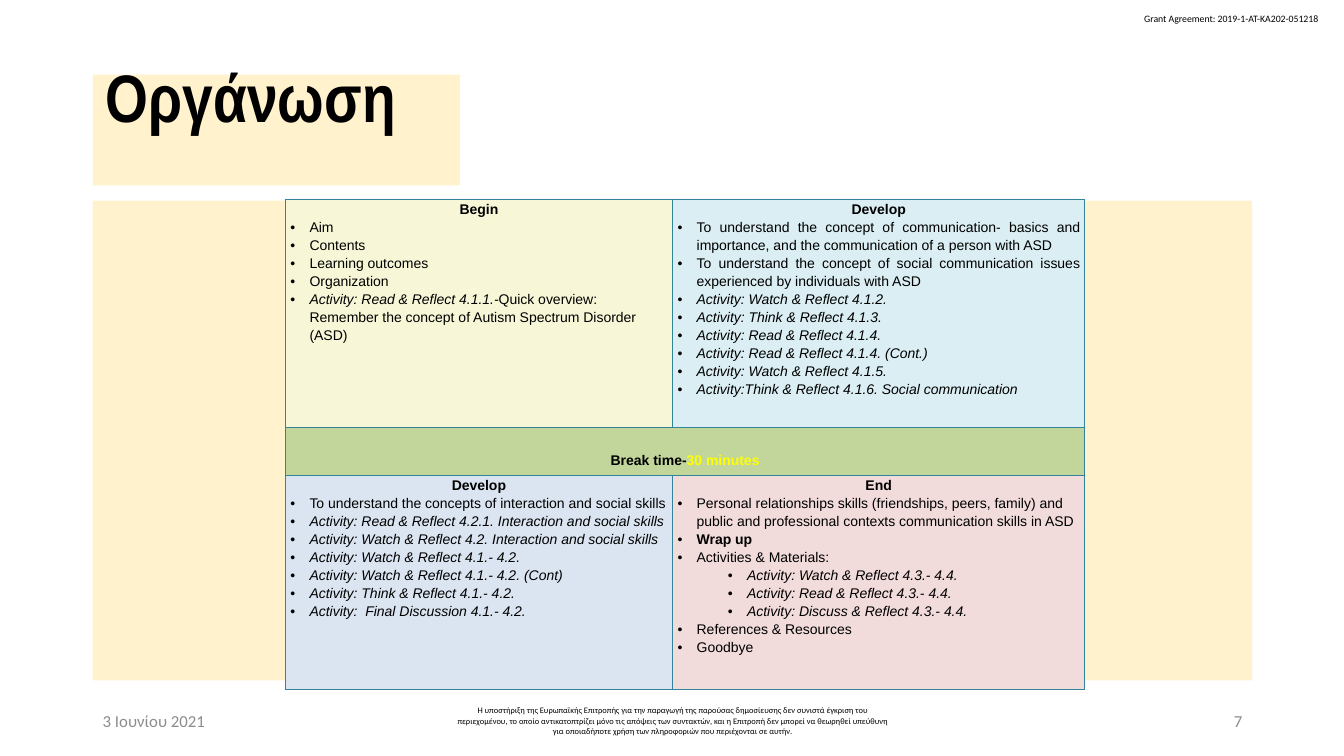
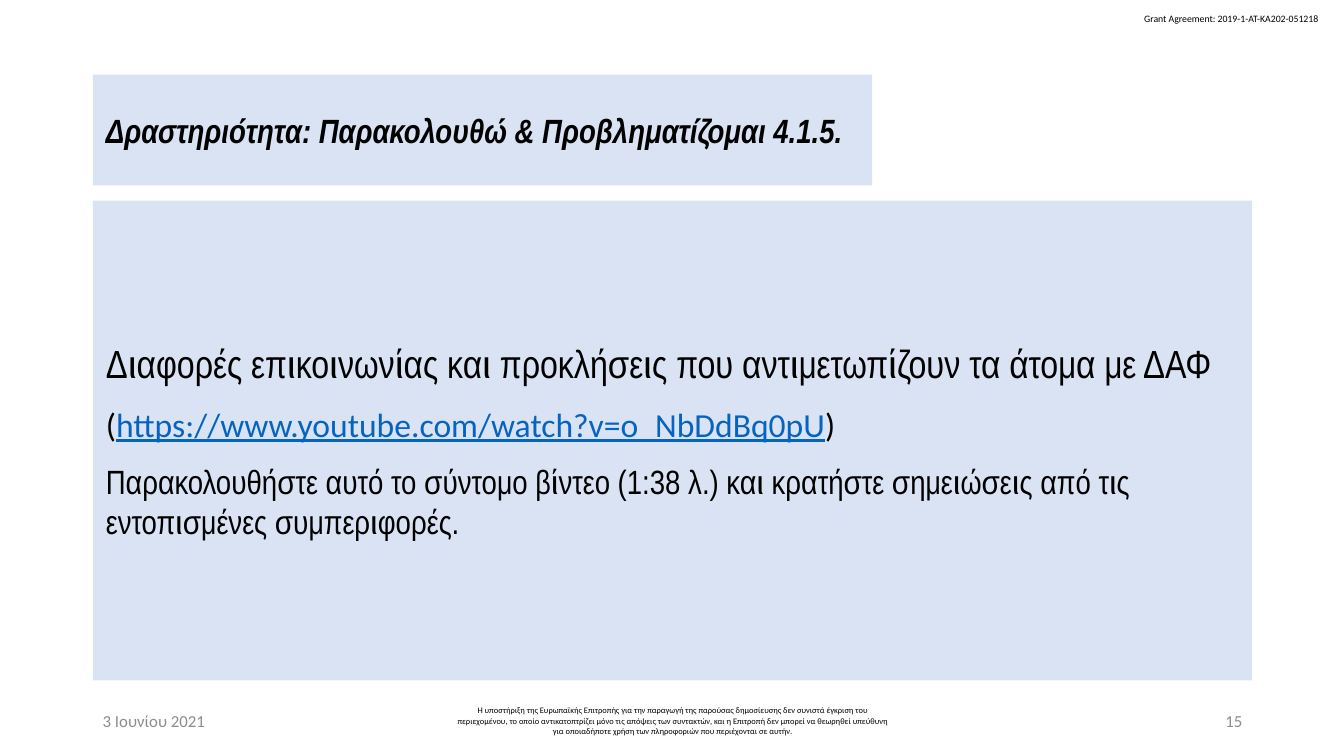
from dataclasses import dataclass

from lxml import etree
from pptx import Presentation
from pptx.dml.color import RGBColor
from pptx.enum.shapes import MSO_SHAPE
from pptx.enum.text import MSO_ANCHOR, MSO_AUTO_SIZE, PP_ALIGN
from pptx.oxml.ns import qn
from pptx.util import Inches, Pt

LEFT, CENTER, RIGHT, JUSTIFY = PP_ALIGN.LEFT, PP_ALIGN.CENTER, PP_ALIGN.RIGHT, PP_ALIGN.JUSTIFY
TOP, MIDDLE, BOTTOM = MSO_ANCHOR.TOP, MSO_ANCHOR.MIDDLE, MSO_ANCHOR.BOTTOM
RECTANGLE, NO_AUTOFIT = MSO_SHAPE.RECTANGLE, MSO_AUTO_SIZE.NONE


@dataclass(frozen=True)
class Theme:
    black: str = "000000"
    gray: str = "8C8C8C"
    cream: str = "FFF2CC"
    pale_blue: str = "DAE3F3"
    link: str = "0563C1"
    highlight: str = "FFFF00"
    border: str = "31849B"
    begin: str = "F7F7D7"
    develop: str = "DAEEF3"
    pause: str = "C2D69B"
    interaction: str = "DBE5F1"
    end: str = "F2DBDB"
    heading_font: str = "Arial Narrow"
    text_font: str = "Calibri"
    table_font: str = "Arial"
    title_size: int = 48
    lead_size: int = 28
    text_size: int = 24
    footer_size: int = 12
    table_size: int = 10
    grant_size: int = 7
    disclaimer_size: int = 6


THEME = Theme()
BAND_LEFT, BAND_WIDTH = Inches(0.92), Inches(11.5)
TITLE_TOP, TITLE_HEIGHT = Inches(0.74), Inches(1.1)
BODY_TOP, BODY_HEIGHT = Inches(1.99), Inches(4.76)
BAND_INSETS = {
    "margin_left": Inches(0.13),
    "margin_right": Inches(0.13),
    "margin_top": Inches(0.07),
    "margin_bottom": Inches(0.07),
    "word_wrap": True,
    "auto_size": NO_AUTOFIT,
    "vertical_anchor": MIDDLE,
}
BOLD, ITALIC = {"bold": True}, {"italic": True}


def add_runs(paragraph, runs, font, size, color=THEME.black):
    """Write (text, format) pairs; a format overrides the shared font values."""
    for text, changes in runs:
        run = paragraph.add_run()
        run.text = text
        values = {"name": font, "size": Pt(size), "bold": False, "italic": False} | changes
        run.font.color.rgb = RGBColor.from_string(values.pop("color", color))
        for attribute, value in values.items():
            setattr(run.font, attribute, value)


def paint(shape, color):
    shape.fill.solid()
    shape.fill.fore_color.rgb = RGBColor.from_string(color)


prs = Presentation()
prs.slide_width, prs.slide_height = Inches(13.33), Inches(7.5)
TITLE_AND_CONTENT, TITLE_ONLY = prs.slide_layouts[1], prs.slide_layouts[5]

DISCLAIMER = (
    "Η υποστήριξη της Ευρωπαϊκής Επιτροπής για την παραγωγή της παρούσας δημοσίευσης "
    "δεν συνιστά έγκριση του περιεχομένου, το οποίο αντικατοπτρίζει μόνο τις απόψεις "
    "των συντακτών, και η Επιτροπή δεν μπορεί να θεωρηθεί υπεύθυνη για οποιαδήποτε "
    "χρήση των πληροφοριών που περιέχονται σε αυτήν."
)

# Shared frame: title band, grant line and footer
pages = [
    (TITLE_ONLY, "Οργάνωση", 3.64, THEME.cream, THEME.title_size, BOLD, "7"),
    (TITLE_AND_CONTENT, "Δραστηριότητα: Παρακολουθώ & Προβληματίζομαι 4.1.5.", 7.73,
     THEME.pale_blue, THEME.text_size, BOLD | ITALIC, "15"),
]
slides = []
for layout, heading, width, color, size, style, number in pages:
    slide = prs.slides.add_slide(layout)
    slides.append(slide)

    title = slide.shapes.title
    title.left, title.top = BAND_LEFT, TITLE_TOP
    title.width, title.height = Inches(width), TITLE_HEIGHT
    paint(title, color)
    for attribute, value in BAND_INSETS.items():
        setattr(title.text_frame, attribute, value)
    title_line = title.text_frame.paragraphs[0]
    title_line.alignment = LEFT
    add_runs(title_line, [(heading, style)], THEME.heading_font, size)

    margin_notes = [
        ("Grant Agreement: 2019-1-AT-KA202-051218", 11.25, 0.08, 1.97, 0.22,
         LEFT, THEME.grant_size, THEME.black, TOP, False),
        ("3 Ιουνίου 2021", 0.92, 6.95, 3, 0.4,
         LEFT, THEME.footer_size, THEME.gray, MIDDLE, True),
        (DISCLAIMER, 4.42, 6.95, 4.5, 0.4,
         CENTER, THEME.disclaimer_size, THEME.black, MIDDLE, True),
        (number, 9.42, 6.95, 3, 0.4,
         RIGHT, THEME.footer_size, THEME.gray, MIDDLE, True),
    ]
    for text, left, top, width, height, alignment, size, color, anchor, wrap in margin_notes:
        note = slide.shapes.add_textbox(Inches(left), Inches(top), Inches(width), Inches(height))
        note.text_frame.word_wrap = wrap
        note.text_frame.vertical_anchor = anchor
        note_line = note.text_frame.paragraphs[0]
        note_line.alignment = alignment
        add_runs(note_line, [(text, {})], THEME.text_font, size, color)

organization, activity = slides

# Organization: the large title sits high in its band
organization_title = organization.shapes.title.text_frame
organization_title.vertical_anchor = TOP
organization_title.margin_top = 0
organization_title.paragraphs[0].line_spacing = 0.75

backdrop = organization.shapes.add_shape(RECTANGLE, BAND_LEFT, BODY_TOP, BAND_WIDTH, BODY_HEIGHT)
backdrop.shadow.inherit = False
backdrop.line.fill.background()
paint(backdrop, THEME.cream)

COLUMN_WIDTHS, ROW_HEIGHTS = [3.84, 4.09], [2.26, 0.48, 2.12]
schedule = organization.shapes.add_table(
    len(ROW_HEIGHTS), len(COLUMN_WIDTHS), Inches(2.83), Inches(1.98),
    Inches(sum(COLUMN_WIDTHS)), Inches(sum(ROW_HEIGHTS)),
).table
for column, width in zip(schedule.columns, COLUMN_WIDTHS):
    column.width = Inches(width)
for row, height in zip(schedule.rows, ROW_HEIGHTS):
    row.height = Inches(height)
schedule.cell(1, 0).merge(schedule.cell(1, 1))

ROW_FILLS = [
    (THEME.begin, THEME.develop),
    (THEME.pause, THEME.pause),
    (THEME.interaction, THEME.end),
]
for row, fills in zip(schedule.rows, ROW_FILLS):
    for cell, color in zip(row.cells, fills):
        cell_properties = cell._tc.get_or_add_tcPr()
        for side in ("a:lnL", "a:lnR", "a:lnT", "a:lnB"):
            edge = etree.SubElement(cell_properties, qn(side), w=str(Pt(1)))
            edge_fill = etree.SubElement(edge, qn("a:solidFill"))
            etree.SubElement(edge_fill, qn("a:srgbClr"), val=THEME.border)
        paint(cell, color)
        cell.margin_left = cell.margin_right = Inches(0.05)
        cell.margin_top = cell.margin_bottom = 0

# Each session: row, column, heading, then (alignment, level, runs) per bullet
sessions = [
    (0, 0, "Begin", [
        (LEFT, 0, [("Aim", {})]),
        (LEFT, 0, [("Contents", {})]),
        (LEFT, 0, [("Learning outcomes", {})]),
        (LEFT, 0, [("Organization", {})]),
        (LEFT, 0, [
            ("Activity: Read & Reflect 4.1.1.-", ITALIC),
            ("Quick overview: Remember the concept of Autism Spectrum Disorder (ASD)", {}),
        ]),
    ]),
    (0, 1, "Develop", [
        (JUSTIFY, 0, [("To understand the concept of communication- basics and importance, "
                       "and the communication of a person with ASD", {})]),
        (JUSTIFY, 0, [("To understand the concept of social communication issues "
                       "experienced by individuals with ASD", {})]),
        (JUSTIFY, 0, [("Activity: Watch & Reflect 4.1.2.", ITALIC)]),
        (JUSTIFY, 0, [("Activity: Think & Reflect 4.1.3.", ITALIC)]),
        (JUSTIFY, 0, [("Activity: Read & Reflect 4.1.4.", ITALIC)]),
        (JUSTIFY, 0, [("Activity: Read & Reflect 4.1.4. (Cont.)", ITALIC)]),
        (JUSTIFY, 0, [("Activity: Watch & Reflect 4.1.5.", ITALIC)]),
        (JUSTIFY, 0, [("Activity:Think & Reflect 4.1.6. Social communication", ITALIC)]),
    ]),
    (2, 0, "Develop", [
        (LEFT, 0, [("To understand the concepts of interaction and social skills", {})]),
        (JUSTIFY, 0, [("Activity: Read & Reflect 4.2.1. Interaction and social skills", ITALIC)]),
        (JUSTIFY, 0, [("Activity: Watch & Reflect 4.2. Interaction and social skills", ITALIC)]),
        (JUSTIFY, 0, [("Activity: Watch & Reflect 4.1.- 4.2.", ITALIC)]),
        (JUSTIFY, 0, [("Activity: Watch & Reflect 4.1.- 4.2. (Cont)", ITALIC)]),
        (JUSTIFY, 0, [("Activity: Think & Reflect 4.1.- 4.2.", ITALIC)]),
        (JUSTIFY, 0, [("Activity:  Final Discussion 4.1.- 4.2.", ITALIC)]),
    ]),
    (2, 1, "End", [
        (LEFT, 0, [("Personal relationships skills (friendships, peers, family) and public "
                    "and professional contexts communication skills in ASD", {})]),
        (LEFT, 0, [("Wrap up", BOLD)]),
        (LEFT, 0, [("Activities & Materials:", {})]),
        (LEFT, 1, [("Activity: Watch & Reflect 4.3.- 4.4.", ITALIC)]),
        (LEFT, 1, [("Activity: Read & Reflect 4.3.- 4.4.", ITALIC)]),
        (LEFT, 1, [("Activity: Discuss & Reflect 4.3.- 4.4.", ITALIC)]),
        (LEFT, 0, [("References & Resources", {})]),
        (LEFT, 0, [("Goodbye", {})]),
    ]),
]
HANGING = Inches(0.19)
for row, column, heading, items in sessions:
    session = schedule.cell(row, column).text_frame
    session_heading = session.paragraphs[0]
    session_heading.alignment = CENTER
    session_heading.line_spacing = 1.15
    add_runs(session_heading, [(heading, BOLD)], THEME.table_font, THEME.table_size)
    for alignment, level, runs in items:
        item = session.add_paragraph()
        properties = item._p.get_or_add_pPr()
        properties.set("marL", str(HANGING + level * Inches(0.5)))
        properties.set("indent", str(-HANGING))
        etree.SubElement(properties, qn("a:buFont"), typeface=THEME.table_font)
        etree.SubElement(properties, qn("a:buChar"), char="•")
        item.alignment, item.level, item.line_spacing = alignment, level, 1.15
        add_runs(item, runs, THEME.table_font, THEME.table_size)

break_time = schedule.cell(1, 0)
break_time.vertical_anchor = BOTTOM
break_time.margin_bottom = Inches(0.07)
break_line = break_time.text_frame.paragraphs[0]
break_line.alignment = CENTER
break_line.line_spacing = 1.15
add_runs(break_line, [("Break time-", BOLD), ("30 minutes", BOLD | {"color": THEME.highlight})],
         THEME.table_font, THEME.table_size)

# Activity: video and task
task = activity.placeholders[1]
task.left, task.top, task.width, task.height = BAND_LEFT, BODY_TOP, BAND_WIDTH, BODY_HEIGHT
paint(task, THEME.pale_blue)
for attribute, value in BAND_INSETS.items():
    setattr(task.text_frame, attribute, value)

task_lines = [
    ([("Διαφορές επικοινωνίας και προκλήσεις που αντιμετωπίζουν τα άτομα με ΔΑΦ", {})],
     THEME.heading_font, THEME.lead_size),
    ([("(", {}),
      ("https://www.youtube.com/watch?v=o_NbDdBq0pU", {"color": THEME.link, "underline": True}),
      (")", {})],
     THEME.text_font, THEME.text_size),
    ([("Παρακολουθήστε αυτό το σύντομο βίντεο (1:38 λ.) και κρατήστε σημειώσεις από τις "
       "εντοπισμένες συμπεριφορές.", {})],
     THEME.heading_font, THEME.text_size),
]
for index, (runs, font, size) in enumerate(task_lines):
    line = task.text_frame.add_paragraph() if index else task.text_frame.paragraphs[0]
    properties = line._p.get_or_add_pPr()
    properties.set("marL", "0")
    properties.set("indent", "0")
    etree.SubElement(properties, qn("a:buNone"))
    line.space_before, line.space_after = Pt(0), Pt(12)
    add_runs(line, runs, font, size)

prs.save("out.pptx")
